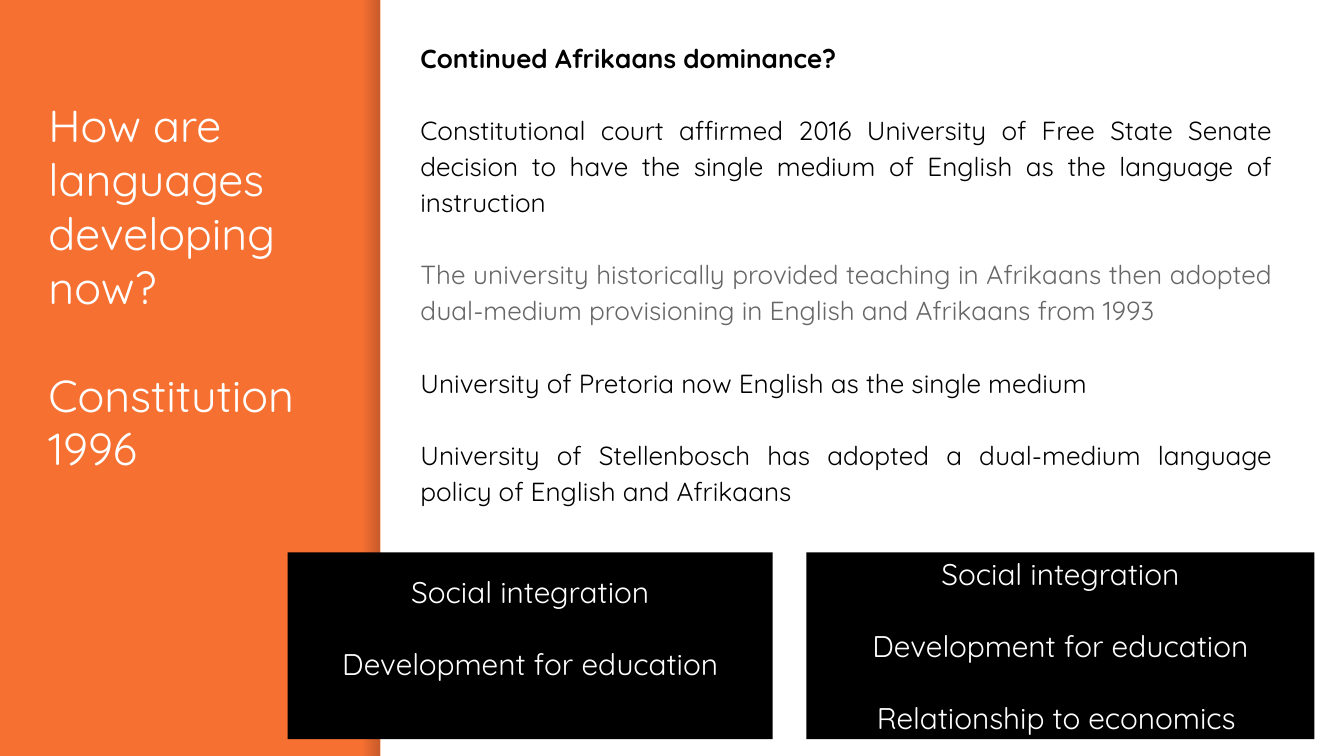
from pptx import Presentation
from pptx.dml.color import RGBColor
from pptx.enum.shapes import MSO_SHAPE
from pptx.enum.text import MSO_ANCHOR, MSO_AUTO_SIZE, PP_ALIGN
from pptx.oxml.ns import qn
from pptx.util import Inches, Pt
from lxml import etree


def rgb(value):
    return RGBColor.from_string(value)


def write(frame, lines, size, align, gap, anchor=MSO_ANCHOR.TOP, spacing=1.0):
    frame.word_wrap = True
    frame.auto_size = MSO_AUTO_SIZE.NONE
    frame.vertical_anchor = anchor
    frame.margin_left = frame.margin_right = Inches(0.1)
    frame.margin_top = frame.margin_bottom = Inches(0.1)
    for index, (text, color, bold) in enumerate(lines):
        paragraph = frame.add_paragraph() if index else frame.paragraphs[0]
        paragraph.text = text
        paragraph.alignment = align
        paragraph.line_spacing = spacing
        paragraph.space_before = Pt(gap if index else 0)
        paragraph.font.name = "Quicksand"
        paragraph.font.size = Pt(size)
        paragraph.font.bold = bold
        paragraph.font.color.rgb = rgb(color)


prs = Presentation()
prs.slide_width = Inches(10)
prs.slide_height = prs.slide_width * 9 // 16
slide = prs.slides.add_slide(prs.slide_layouts[5])
slide.background.fill.solid()
slide.background.fill.fore_color.rgb = rgb("F67031")

edge_shade = slide.shapes.add_shape(
    MSO_SHAPE.RECTANGLE, Inches(2.7), 0, Inches(0.12), prs.slide_height)
edge_shade.shadow.inherit = False
edge_shade.line.fill.background()
edge_shade.fill.gradient()
edge_shade.fill.gradient_angle = 0
for stop in edge_shade.fill.gradient_stops:
    stop.color.rgb = rgb("000014")
stop_colors = edge_shade.element.spPr.iter(qn("a:srgbClr"))
for stop_color, opacity in zip(stop_colors, (0, 20)):
    etree.SubElement(stop_color, qn("a:alpha")).set("val", str(opacity * 1000))

content_panel = slide.shapes.add_shape(
    MSO_SHAPE.RECTANGLE, Inches(2.83), 0, Inches(7.17), prs.slide_height)
content_panel.shadow.inherit = False
content_panel.line.fill.background()
content_panel.fill.solid()
content_panel.fill.fore_color.rgb = rgb("FFFFFF")

title = slide.shapes.title
title.left, title.top = Inches(0.26), Inches(0.63)
title.width, title.height = Inches(2.24), Inches(4.35)
headings = ["How are languages developing now?", "Constitution 1996"]
write(title.text_frame, [(text, "FFFFFF", False) for text in headings],
      24, PP_ALIGN.LEFT, 29)

findings = [
    ("Continued Afrikaans dominance?", "000000", True),
    ("Constitutional court affirmed 2016 University of Free State Senate decision "
     "to have the single medium of English as the language of instruction",
     "000000", False),
    ("The university historically provided teaching in Afrikaans then adopted "
     "dual-medium provisioning in English and Afrikaans from 1993", "666666", False),
    ("University of Pretoria now English as the single medium", "000000", False),
    ("University of Stellenbosch has adopted a dual-medium language policy of "
     "English and Afrikaans", "000000", False),
]
body = slide.shapes.add_textbox(Inches(3.03), Inches(0.18), Inches(6.54), Inches(4.35))
write(body.text_frame, findings, 14, PP_ALIGN.JUSTIFY, 19.4, spacing=1.15)

goals = ["Social integration", "Development for education", "Relationship to economics "]
goal_boxes = [
    (6, 3.78, goals, MSO_ANCHOR.MIDDLE, 0.1),
    (2.14, 3.61, goals[:2], MSO_ANCHOR.TOP, 0.16),
]
for left, width, lines, anchor, top_margin in goal_boxes:
    goal_box = slide.shapes.add_shape(
        MSO_SHAPE.RECTANGLE, Inches(left), Inches(4.11), Inches(width), Inches(1.39))
    goal_box.shadow.inherit = False
    goal_box.line.fill.background()
    goal_box.fill.solid()
    goal_box.fill.fore_color.rgb = rgb("000000")
    write(goal_box.text_frame, [(text, "FFFFFF", False) for text in lines],
          16, PP_ALIGN.CENTER, 19.3, anchor)
    goal_box.text_frame.margin_top = Inches(top_margin)

prs.save("out.pptx")
